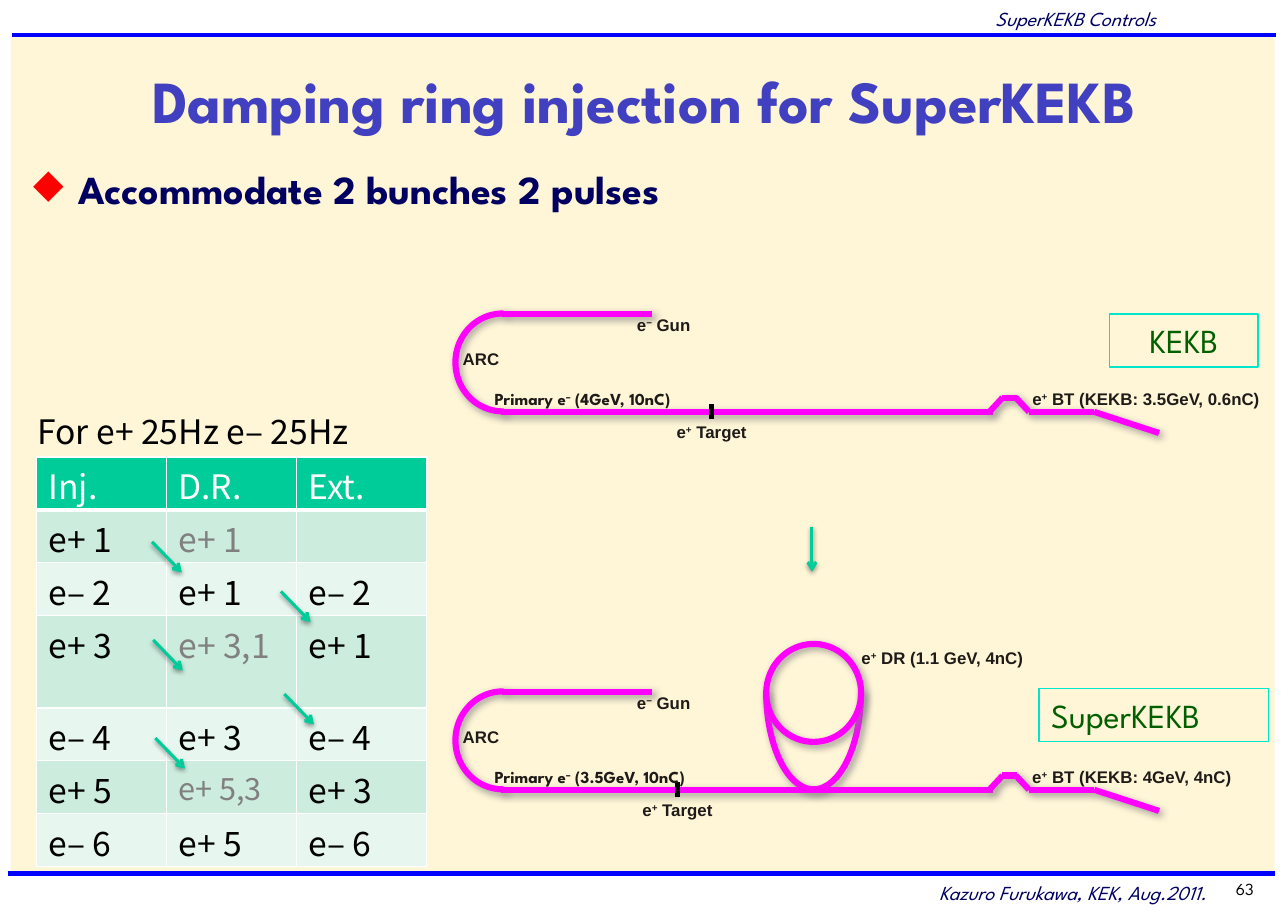
"""Build the slide on damping ring injection for SuperKEKB."""
from lxml import etree
from pptx import Presentation
from pptx import util as u
from pptx.dml.color import RGBColor
from pptx.enum import shapes, text
from pptx.oxml import ns

COLORS = {
    "cream": "FFF5D7", "rule": "0000FF", "navy": "000060", "title": "4040C0",
    "bullet": "FF0000", "beam": "FF00FF", "label": "1E1B18", "black": "000000",
    "white": "FFFFFF", "gray": "808080", "green": "00CC99", "frame": "00E6CC",
    "machine": "006000", "odd": "CCECDE", "even": "E7F6EF",
}
SPARTAN, ARIAL, NOTO = "League Spartan", "Arial", "Noto Sans CJK JP"
BEAM_SHADOW = ("gray", 75, 5, 3, 45)
ARROW_SHADOW = ("black", 38, 3.1, 1.6, 90)
SCHEDULE = [
    ("Inj.", "D.R.", "Ext."),
    ("e+ 1", "e+ 1", ""),
    ("e– 2", "e+ 1", "e– 2"),
    ("e+ 3", "e+ 3,1", "e+ 1"),
    ("e– 4", "e+ 3", "e– 4"),
    ("e+ 5", "e+ 5,3", "e+ 3"),
    ("e– 6", "e+ 5", "e– 6"),
]
TRANSFERS = [(99.4, 354.2), (183.6, 386.6), (100.1, 418.3), (185.8, 453.6), (101.5, 482.4)]


def rgb(name):
    """Return the named colour."""
    return RGBColor.from_string(COLORS[name])


def points(values):
    """Turn plain numbers into lengths in points."""
    return [u.Pt(value) for value in values]


def sub(parent, tag, **attributes):
    """Append a DrawingML element and return it."""
    return etree.SubElement(parent, ns.qn(tag), attributes)


def paint(parent, color):
    """Append a solid fill and return its colour element."""
    return sub(sub(parent, "a:solidFill"), "a:srgbClr", val=COLORS[color])


def set_shadow(part, shadow=None):
    """Give a part the stated outer shadow, or none."""
    effects = sub(part.element.spPr, "a:effectLst")
    if shadow:
        color, alpha, blur, distance, angle = shadow
        outer = sub(effects, "a:outerShdw", blurRad=str(u.Pt(blur)), dist=str(u.Pt(distance)),
                    dir=str(angle * 60000), algn="ctr", rotWithShape="0")
        tint = sub(outer, "a:srgbClr", val=COLORS[color])
        sub(tint, "a:alpha", val=str(alpha * 1000))


def add_line(slide, start, end, color, width, shadow=None, arrow=False):
    """Draw a straight line, with an arrowhead at its end if wanted."""
    line = slide.shapes.add_connector(shapes.MSO_CONNECTOR.STRAIGHT, *points(start + end))
    line.line.color.rgb = rgb(color)
    line.line.width = u.Pt(width)
    if arrow:
        sub(line.line._get_or_add_ln(), "a:tailEnd", type="arrow")
    set_shadow(line, shadow)


def add_run(paragraph, words, font, size, color, bold=False, italic=False, baseline=0):
    """Add one formatted run to a paragraph."""
    run = paragraph.add_run()
    run.text = words
    run.font.name, run.font.size = font, u.Pt(size)
    run.font.bold, run.font.italic = bold, italic
    run.font.color.rgb = rgb(color)
    if baseline:
        run._r.get_or_add_rPr().set("baseline", str(baseline * 1000))


def add_text(slide, box, align="LEFT", insets=(7.9, 3.6, 7.9, 3.6), wrap=True):
    """Add a text box and return its first paragraph."""
    frame = slide.shapes.add_textbox(*points(box)).text_frame
    frame.word_wrap = wrap
    frame.auto_size = text.MSO_AUTO_SIZE.NONE if wrap else text.MSO_AUTO_SIZE.SHAPE_TO_FIT_TEXT
    (frame.margin_left, frame.margin_top,
     frame.margin_right, frame.margin_bottom) = points(insets)
    paragraph = frame.paragraphs[0]
    paragraph.alignment = text.PP_ALIGN[align]
    return paragraph


def add_label(slide, box, *pieces, font=ARIAL):
    """Label a beamline part, raising every second piece."""
    paragraph = add_text(slide, box, insets=(0, 0, 0, 0), wrap=False)
    for index, piece in enumerate(pieces):
        add_run(paragraph, piece, font, 11, "label", bold=True, baseline=30 * (index % 2))


def add_arc(slide, box, adjustments):
    """Draw a bend of the beamline."""
    arc = slide.shapes.add_shape(shapes.MSO_SHAPE.BLOCK_ARC, *points(box))
    for index, value in enumerate(adjustments):
        arc.adjustments[index] = value
    arc.rotation = 270
    arc.fill.solid()
    arc.fill.fore_color.rgb = rgb("white")
    arc.line.color.rgb = rgb("beam")
    arc.line.width = u.Pt(4)
    set_shadow(arc, BEAM_SHADOW)


def add_machine(slide, box, name, align):
    """Add the framed name of a machine."""
    frame = slide.shapes.add_shape(shapes.MSO_SHAPE.RECTANGLE, *points(box))
    frame.fill.background()
    frame.line.color.rgb = rgb("frame")
    frame.line.width = u.Pt(1)
    set_shadow(frame)
    frame.text_frame.vertical_anchor = text.MSO_ANCHOR.MIDDLE
    frame.text_frame.margin_left = frame.text_frame.margin_right = u.Pt(7.9)
    paragraph = frame.text_frame.paragraphs[0]
    paragraph.alignment = text.PP_ALIGN[align]
    add_run(paragraph, name, SPARTAN, 22, "machine")


def add_beamline(slide, top, target, primary, primary_width, transport, transport_width):
    """Draw one linac from gun to beam transport."""
    low, bump = top + 64, top + 54.7
    add_arc(slide, (296.6, top + 0.7, 64, 62), (108, 0, 0))
    segments = [
        ((328.3, top), (426.2, top)), ((327.6, low), (648.7, low)),
        ((646.6, low), (655.2, bump)), ((664.6, bump), (654.5, bump)),
        ((672.5, low), (663.8, bump)), ((672.5, low), (715, low)),
        ((757.4, low + 13.8), (715, low)),
    ]
    for start, end in segments:
        add_line(slide, start, end, "beam", 4, BEAM_SHADOW)
    add_line(slide, (target, low - 5), (target, low + 4.6), "black", 3)
    add_label(slide, (302.4, top + 23, 24.5, 13.7), "ARC")
    add_label(slide, (416.2, top + 0.7, 36, 13.7), "e", "−", " Gun")
    add_label(slide, (target - 23, top + 70.6, 46, 13.7), "e", "+", " Target")
    add_label(slide, (674.6, top + 49, transport_width, 13.7), "e", "+", f" BT ({transport})")
    add_label(slide, (323.3, top + 49, primary_width, 13), "Primary e", "–", f" ({primary})",
              font=SPARTAN)


def fill_cell(cell, words, row, column):
    """Set the borders, fill and words of one schedule cell."""
    for side in "LRTB":
        width = 3 if (row, side) in ((0, "B"), (1, "T")) else 1
        paint(sub(cell._tc.get_or_add_tcPr(), f"a:ln{side}", w=str(u.Pt(width))), "white")
    cell.fill.solid()
    cell.fill.fore_color.rgb = rgb("green" if row == 0 else "odd" if row % 2 else "even")
    cell.margin_left = cell.margin_right = u.Pt(7.9)
    cell.margin_top, cell.margin_bottom = u.Pt(2.5), u.Pt(0)
    if words:
        waiting = column == 1 and row % 2
        color = "white" if row == 0 else "gray" if waiting else "black"
        size = 20 if words == "e+ 5,3" else 22
        add_run(cell.text_frame.paragraphs[0], words, NOTO, size, color)


def add_schedule(slide):
    """Add the injection schedule and its transfer arrows."""
    caption = add_text(slide, (16.6, 265, 250.6, 34.6), wrap=False)
    add_run(caption, "For e+ 25Hz e– 25Hz", NOTO, 22, "black")
    box = points((23.8, 298.8, 254.9, 267.1))
    schedule = slide.shapes.add_table(len(SCHEDULE), 3, *box).table
    for column in schedule.columns:
        column.width = u.Pt(84.96)
    for row, entries in enumerate(SCHEDULE):
        schedule.rows[row].height = u.Pt(60.5 if row == 3 else 34.5)
        for column, words in enumerate(entries):
            fill_cell(schedule.cell(row, column), words, row, column)
    for x, y in TRANSFERS:
        add_line(slide, (x, y), (x + 19.4, y + 20), "green", 2, ARROW_SHADOW, arrow=True)


def add_page(slide):
    """Add the page ground, rules, header, footer and headings."""
    ground = slide.shapes.add_shape(shapes.MSO_SHAPE.RECTANGLE, *points((7.2, 23, 825.8, 548.6)))
    ground.fill.solid()
    ground.fill.fore_color.rgb = rgb("cream")
    ground.line.fill.background()
    set_shadow(ground)
    add_line(slide, (7.9, 23), (833.8, 23), "rule", 3)
    add_line(slide, (5, 571), (833, 571), "rule", 3)
    margins = (7.9, 5.4, 7.9, 3.6)
    for box, words in (((565.2, -1.4, 198, 23.8), "SuperKEKB Controls"),
                       ((565.2, 570.2, 231.1, 23.8), "Kazuro Furukawa, KEK, Aug.2011.")):
        add_run(add_text(slide, box, "RIGHT", margins), words, SPARTAN, 13, "navy", italic=True)
    number = add_text(slide, (778.3, 571, 49, 20.2), "RIGHT")
    add_run(number, "63", SPARTAN, 11, "black")
    title = add_text(slide, (13, 36.7, 815.8, 56.2), "CENTER")
    title._parent.vertical_anchor = text.MSO_ANCHOR.MIDDLE
    add_run(title, "Damping ring injection for SuperKEKB", SPARTAN, 39, "title", bold=True)
    point = add_text(slide, (13.7, 99.4, 815, 463), insets=(7.9, 8, 7.9, 3.6))
    settings = point._p.get_or_add_pPr()
    settings.set("marL", str(u.Pt(29.5)))
    settings.set("indent", str(u.Pt(-29.5)))
    sub(sub(settings, "a:buClr"), "a:srgbClr", val=COLORS["bullet"])
    sub(settings, "a:buChar", char="◆")
    add_run(point, "Accommodate 2 bunches 2 pulses", SPARTAN, 26, "navy", bold=True)


def main():
    """Build and save the slide."""
    deck = Presentation()
    deck.slide_width, deck.slide_height = points((841.68, 595.44))
    slide = deck.slides.add_slide(deck.slide_layouts[6])
    add_page(slide)
    add_arc(slide, (468, 421.2, 127.4, 62), (53.99, 161.57, 0))
    add_beamline(slide, 205.2, 465.1, "4GeV, 10nC", 136, "KEKB: 3.5GeV, 0.6nC", 150.5)
    add_beamline(slide, 452.2, 442.8, "3.5GeV, 10nC", 146, "KEKB: 4GeV, 4nC", 132.5)
    add_arc(slide, (499.7, 421.9, 64, 62), (108, 108, 0))
    add_label(slide, (563, 423.4, 108, 13), "e", "+", " DR (1.1 GeV, 4nC)")
    add_machine(slide, (725, 205.2, 97.2, 34.6), "KEKB", "CENTER")
    add_machine(slide, (679, 450, 149.8, 34.6), "SuperKEKB", "LEFT")
    add_line(slide, (530.6, 344.2), (530.6, 373.7), "green", 2, ARROW_SHADOW, arrow=True)
    add_schedule(slide)
    deck.save("out.pptx")


if __name__ == "__main__":
    main()
